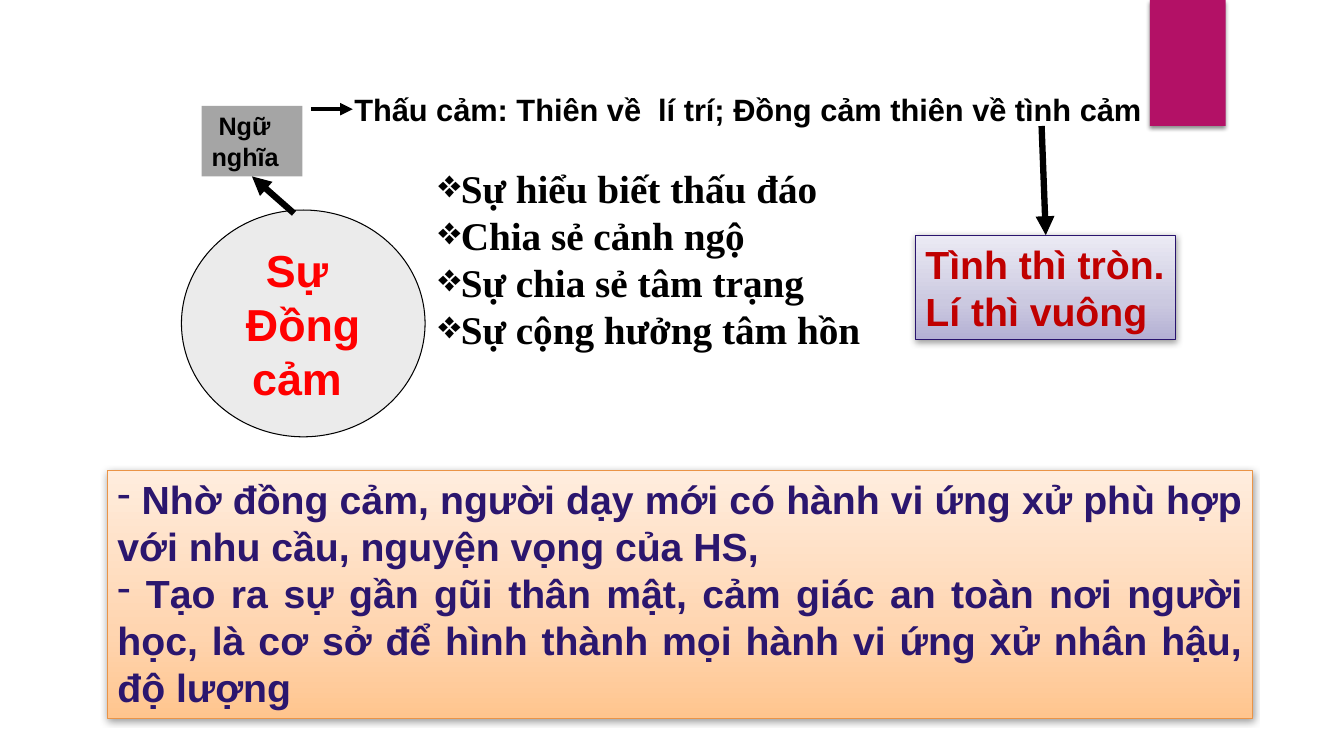
from lxml.etree import SubElement
from pptx import Presentation
from pptx.dml.color import RGBColor
from pptx.enum.shapes import MSO_CONNECTOR, MSO_SHAPE
from pptx.enum.text import MSO_ANCHOR, PP_ALIGN
from pptx.oxml import parse_xml
from pptx.oxml.ns import nsdecls, qn
from pptx.util import Inches, Pt

W, H = Inches(13.33), Inches(7.5)
COLS, ROWS = 160, 90
C = {"black": "000000", "red": "FF0000", "crimson": "C00000", "indigo": "2B166E",
     "magenta": "B31166", "pale": "EBEBEB", "grey": "A5A5A5",
     "violet": "29136E", "orange": "EA9447"}
LILAC = {0: "EBEAF4", 65: "CBC9E0", 100: "B4B0D4"}
PEACH = {0: "FFEDDE", 65: "FFD5B0", 100: "FFC58E"}
STRIP_SHADOW = {"alpha": 45, "blur": 3, "dist": 2}
PANEL_SHADOW = {"alpha": 38, "blur": 5, "dist": 1.6}


def cell(x, y):
    """Turn grid columns and rows into slide lengths."""
    return round(x * W / COLS), round(y * H / ROWS)


def rgb(name):
    """Look up a palette colour."""
    return RGBColor.from_string(C[name])


def gradient(stops):
    """Build a top-to-bottom gradient fill."""
    gs = "".join(f'<a:gs pos="{pos * 1000}"><a:srgbClr val="{color}"/></a:gs>'
                 for pos, color in stops.items())
    return parse_xml(f'<a:gradFill {nsdecls("a")} rotWithShape="1"><a:gsLst>{gs}</a:gsLst>'
                     '<a:lin ang="5400000" scaled="0"/></a:gradFill>')


def add_shadow(sp, alpha, blur, dist):
    """Give a shape a soft shadow falling straight down."""
    effects = sp._element.spPr.find(qn("a:effectLst"))
    outer = SubElement(effects, qn("a:outerShdw"), blurRad=str(Pt(blur)), dist=str(Pt(dist)),
                       dir="5400000", algn="ctr", rotWithShape="0")
    color = SubElement(outer, qn("a:srgbClr"), val=C["black"])
    SubElement(color, qn("a:alpha"), val=str(alpha * 1000))


def add_block(s, kind, box, fill, line=None, shadow=None):
    """Add a preset shape with a plain or gradient fill."""
    sp = s.shapes.add_shape(kind, *cell(*box[:2]), *cell(*box[2:]))
    sp.shadow.inherit = False
    if isinstance(fill, dict):
        sp._element.spPr.find(qn("a:prstGeom")).addnext(gradient(fill))
    else:
        sp.fill.solid()
        sp.fill.fore_color.rgb = rgb(fill)
    if line:
        sp.line.color.rgb = rgb(line)
        sp.line.width = Pt(0.75)
    else:
        sp.line.fill.background()
    if shadow:
        add_shadow(sp, **shadow)
    return sp


def add_textbox(s, box):
    """Add an empty text box."""
    return s.shapes.add_textbox(*cell(*box[:2]), *cell(*box[2:]))


def write(sp, lines, size, color, name="Arial", align=PP_ALIGN.LEFT, bullet=None,
          anchor=MSO_ANCHOR.TOP, wrap=True):
    """Write one bold paragraph per line."""
    tf = sp.text_frame
    for key, value in {"word_wrap": wrap, "vertical_anchor": anchor}.items():
        setattr(tf, key, value)
    for i, line in enumerate(lines):
        p = tf.add_paragraph() if i else tf.paragraphs[0]
        p.alignment = align
        if bullet:
            SubElement(p._p.get_or_add_pPr(), qn("a:buChar"), char=bullet)
        r = p.add_run()
        r.text = line
        for key, value in {"name": name, "size": Pt(size), "bold": True}.items():
            setattr(r.font, key, value)
        r.font.color.rgb = rgb(color)


def add_arrow(s, start, end, width, target=None, site=0):
    """Draw an arrow, joined to a side of the target when there is one."""
    cx = s.shapes.add_connector(MSO_CONNECTOR.STRAIGHT, *cell(*start), *cell(*end))
    if target:
        cx.end_connect(target, site)
    cx.line.color.rgb = rgb("black")
    cx.line.width = Pt(width)
    SubElement(cx.line._get_or_add_ln(), qn("a:tailEnd"), type="triangle")
    SubElement(cx._element.spPr, qn("a:effectLst"))


def main():
    """Build the slide on empathy."""
    prs = Presentation()
    prs.slide_width, prs.slide_height = W, H
    s = prs.slides.add_slide(prs.slide_layouts[6])

    add_block(s, MSO_SHAPE.RECTANGLE, (136.9, 0, 9, 15), "magenta", shadow=STRIP_SHADOW)
    empathy = add_block(s, MSO_SHAPE.OVAL, (21.6, 25, 29, 27), "pale", "black")
    write(empathy, ["Sự ", "Đồng", "cảm "], 32, "red", align=PP_ALIGN.CENTER,
          anchor=MSO_ANCHOR.MIDDLE, wrap=False)
    write(add_textbox(s, (41, 10.2, 99, 5.6)),
          ["Thấu cảm: Thiên về  lí trí; Đồng cảm thiên về tình cảm"], 22, "black")
    meaning = add_block(s, MSO_SHAPE.RECTANGLE, (24, 12.6, 12, 8.4), "grey")
    write(meaning, [" Ngữ nghĩa"], 18, "black")
    add_arrow(s, (35, 25.4), (30, 21), 4.5, meaning, 2)
    add_arrow(s, (37, 13), (42, 13), 3)
    write(add_textbox(s, (51, 19, 82, 23.9)),
          ["Sự hiểu biết thấu đáo", "Chia sẻ cảnh ngộ", "Sự chia sẻ tâm trạng",
           "Sự cộng hưởng tâm hồn"], 28, "black", name="Times New Roman", bullet="❖")
    proverb = add_block(s, MSO_SHAPE.RECTANGLE, (109, 28, 31, 12.4), LILAC, "violet",
                        PANEL_SHADOW)
    write(proverb, ["Tình thì tròn. Lí thì vuông"], 28, "crimson")
    add_arrow(s, (124, 15), (124.5, 28), 4.5, proverb, 0)
    benefits = add_block(s, MSO_SHAPE.RECTANGLE, (12.8, 56, 136.3, 29.5), PEACH, "orange",
                         PANEL_SHADOW)
    write(benefits,
          [" Nhờ đồng cảm, người dạy mới có hành vi ứng xử phù hợp với nhu cầu, "
           "nguyện vọng của HS,",
           " Tạo ra sự gần gũi thân mật, cảm giác an toàn nơi người học, là cơ sở để "
           "hình thành mọi hành vi ứng xử nhân hậu, độ lượng"],
          28, "indigo", align=PP_ALIGN.JUSTIFY, bullet="-")
    prs.save("out.pptx")


if __name__ == "__main__":
    main()
